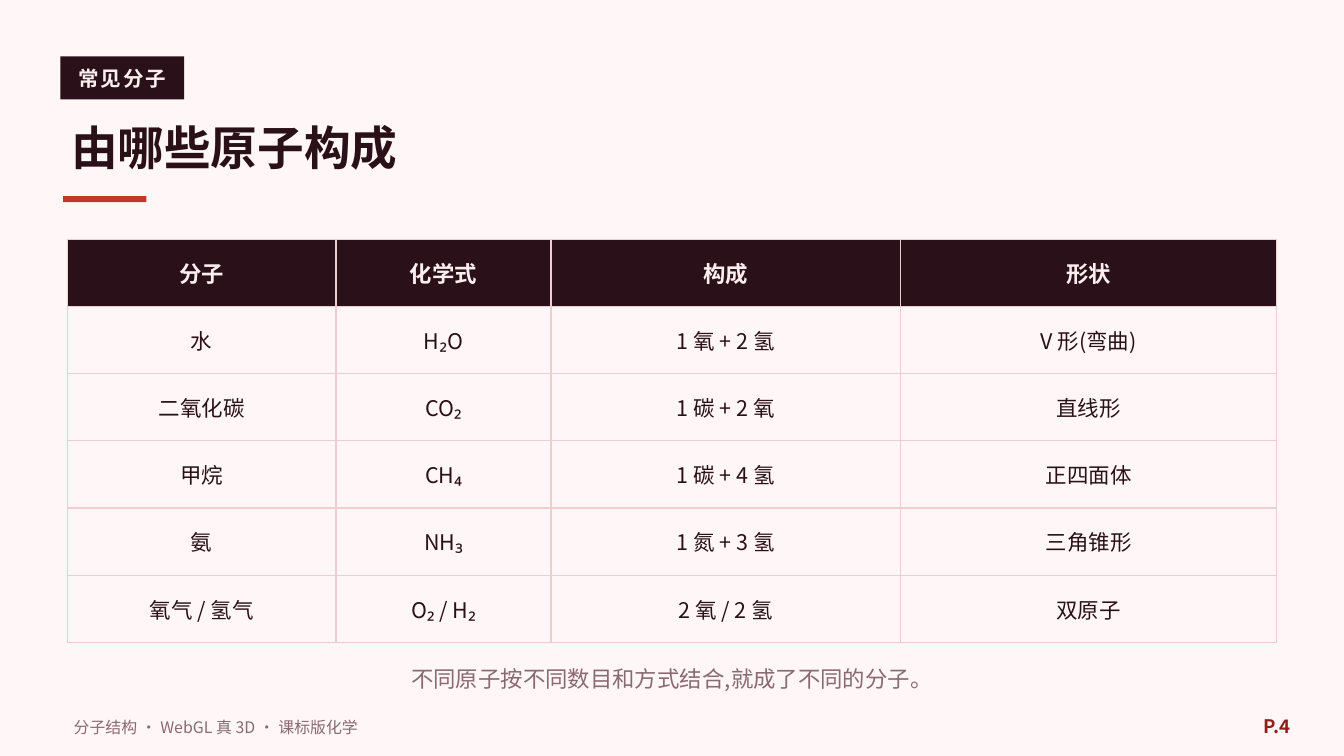
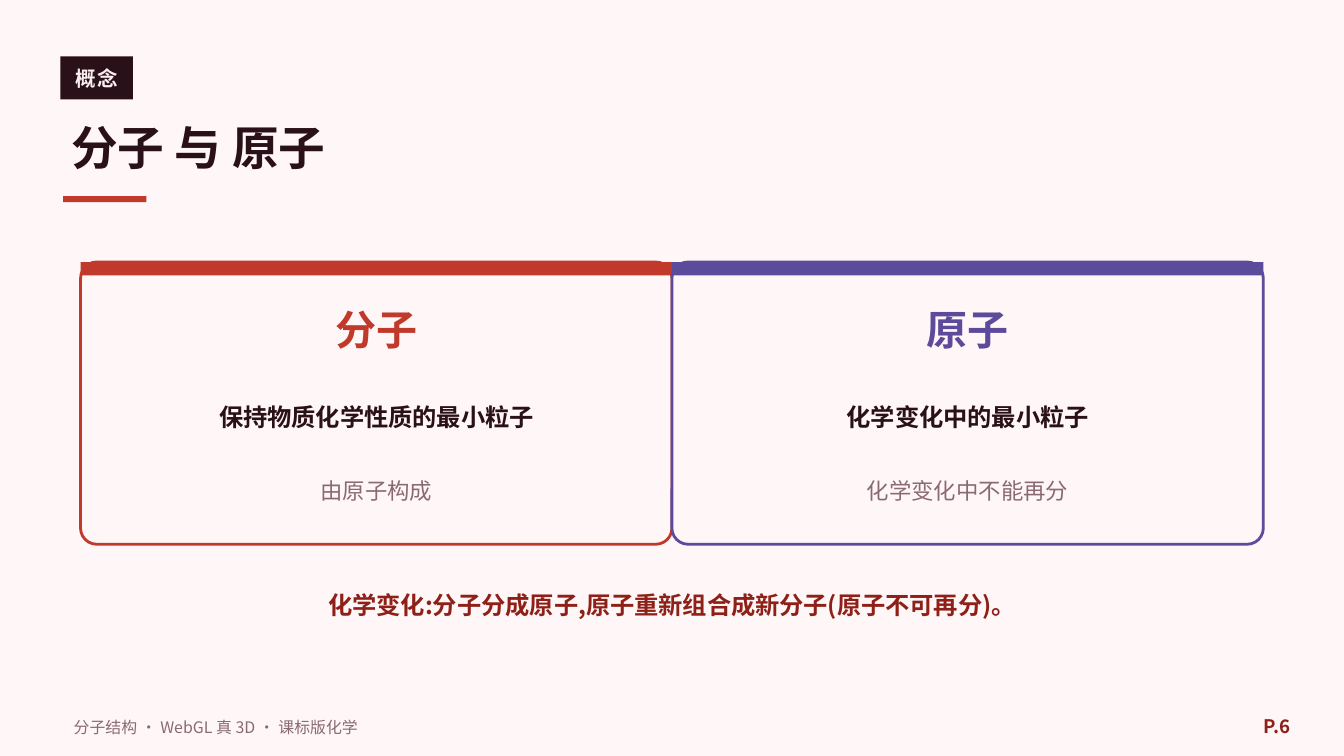
from lxml.etree import SubElement
from pptx import Presentation
from pptx.dml.color import RGBColor as Rgb
from pptx.enum.shapes import MSO_SHAPE as Shape
from pptx.enum.text import MSO_ANCHOR as Anchor, MSO_AUTO_SIZE as Auto, PP_ALIGN as Align
from pptx.oxml.ns import qn
from pptx.util import Pt

SCALE = 4572
WIDE, HIGH = 2000, 1125
FONT = "Noto Sans CJK SC"
HUES = {
    "page": "FEF6F7",
    "ink": "2A1018",
    "pale": "FBEEF0",
    "red": "C0392B",
    "violet": "5B4B9A",
    "grey": "8A6A72",
    "wine": "8E2018",
    "rose": "EFCBD2",
}
FOOT = "分子结构 · WebGL 真 3D · 课标版化学"
ROWS = [
    ["分子", "化学式", "构成", "形状"],
    ["水", "H₂O", "1 氧 + 2 氢", "V 形(弯曲)"],
    ["二氧化碳", "CO₂", "1 碳 + 2 氧", "直线形"],
    ["甲烷", "CH₄", "1 碳 + 4 氢", "正四面体"],
    ["氨", "NH₃", "1 氮 + 3 氢", "三角锥形"],
    ["氧气 / 氢气", "O₂ / H₂", "2 氧 / 2 氢", "双原子"],
]
CARDS = [
    ("分子", "保持物质化学性质的最小粒子", "由原子构成", "red"),
    ("原子", "化学变化中的最小粒子", "化学变化中不能再分", "violet"),
]


def emu(*sizes):
    return [size * SCALE for size in sizes]


def hue(name):
    return Rgb.from_string(HUES[name])


class Deck:
    def __init__(self):
        self.prs = Presentation()
        self.prs.slide_width, self.prs.slide_height = emu(WIDE, HIGH)
        self.paint(self.prs.slide_master.background.fill, "page")
        self.slide = None

    def paint(self, fill, color):
        fill.solid()
        fill.fore_color.rgb = hue(color)

    def label(self, frame, text, size, color, bold=False, align=Align.CENTER, gap=0):
        para = frame.paragraphs[0]
        para.text = text
        para.alignment = align
        font = para.font
        font.size, font.bold, font.name = Pt(size), bold, FONT
        font.color.rgb = hue(color)
        props = para._p.pPr.find(qn("a:defRPr"))
        SubElement(props, qn("a:ea")).set("typeface", FONT)
        if gap:
            props.set("spc", str(gap))

    def text(self, box, words, size, color, **style):
        frame = self.slide.shapes.add_textbox(*emu(*box)).text_frame
        frame.word_wrap = True
        frame.vertical_anchor = Anchor.MIDDLE
        self.label(frame, words, size, color, **style)
        return frame

    def rect(self, box, color):
        shape = self.slide.shapes.add_shape(Shape.RECTANGLE, *emu(*box))
        shape.shadow.inherit = False
        self.paint(shape.fill, color)
        shape.line.fill.background()

    def panel(self, box, color, radius=24):
        shape = self.slide.shapes.add_shape(Shape.ROUNDED_RECTANGLE, *emu(*box))
        shape.adjustments[0] = radius / min(box[2:])
        shape.shadow.inherit = False
        self.paint(shape.fill, "page")
        shape.line.color.rgb = hue(color)
        shape.line.width = Pt(1.5)

    def title(self, words):
        shape = self.slide.shapes.title
        shape.left, shape.top, shape.width, shape.height = emu(86, 156, 1800, 124)
        frame = shape.text_frame
        frame.auto_size = Auto.NONE
        frame.word_wrap = True
        frame.vertical_anchor = Anchor.MIDDLE
        self.label(frame, words, 25, "ink", bold=True, align=Align.LEFT)

    def tag(self, words):
        width = 32 + 38 * len(words)
        self.rect((90, 84, width, 64), "ink")
        frame = self.text((90, 82, width, 68), words, 11, "pale", bold=True, gap=100)
        frame.margin_left = frame.margin_right = 0

    def page(self, tag, title, number):
        self.slide = self.prs.slides.add_slide(self.prs.slide_layouts[5])
        self.tag(tag)
        self.title(title)
        self.rect((94, 292, 124, 9), "red")
        self.text((90, 1052, 1300, 60), FOOT, 8.5, "grey", align=Align.LEFT)
        self.text((1820, 1048, 120, 64), f"P.{number}", 10, "wine",
                  bold=True, align=Align.RIGHT)

    def edge(self, cell):
        props = cell._tc.get_or_add_tcPr()
        for side in "LRTB":
            line = SubElement(props, qn(f"a:ln{side}"), w=str(Pt(0.75)))
            fill = SubElement(line, qn("a:solidFill"))
            SubElement(fill, qn("a:srgbClr"), val=HUES["rose"])

    def table(self, left, top, cols, high, rows):
        box = emu(left, top, sum(cols), high * len(rows))
        grid = self.slide.shapes.add_table(len(rows), len(cols), *box).table
        grid.first_row = grid.horz_banding = False
        for col, width in zip(grid.columns, emu(*cols)):
            col.width = width
        for r, row in enumerate(rows):
            head = r == 0
            for c, words in enumerate(row):
                cell = grid.cell(r, c)
                cell.vertical_anchor = Anchor.MIDDLE
                self.edge(cell)
                self.paint(cell.fill, "ink" if head else "page")
                self.label(cell.text_frame, words, 12 if head else 11.5,
                           "pale" if head else "ink", bold=head)

    def card(self, left, name, role, note, color):
        top, width = 390, 880
        self.panel((left, top, width, 420), color)
        self.rect((left, top, width, 20), color)
        self.text((left, top + 50, width, 100), name, 22, color, bold=True)
        inner = left + 40, width - 80
        self.text((inner[0], top + 180, inner[1], 100), role, 13, "ink", bold=True)
        self.text((inner[0], top + 290, inner[1], 100), note, 12, "grey")


def main():
    deck = Deck()
    deck.page("常见分子", "由哪些原子构成", 4)
    deck.table(100, 356, [400, 320, 520, 560], 100, ROWS)
    deck.text((100, 970, 1800, 80), "不同原子按不同数目和方式结合,就成了不同的分子。", 12, "grey")

    deck.page("概念", "分子 与 原子", 6)
    for i, card in enumerate(CARDS):
        deck.card(120 + 880 * i, *card)
    deck.text((100, 860, 1800, 80), "化学变化:分子分成原子,原子重新组合成新分子(原子不可再分)。",
              13, "wine", bold=True)
    deck.prs.save("out.pptx")


if __name__ == "__main__":
    main()
